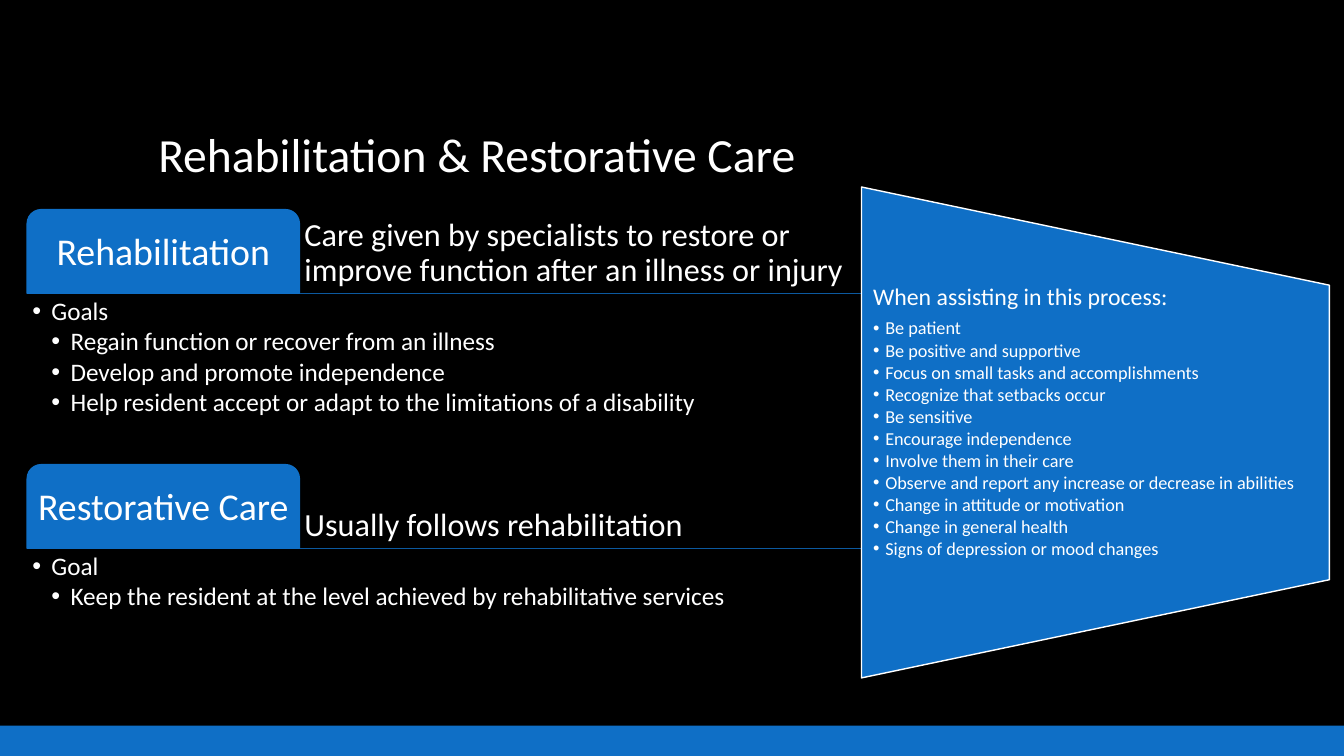
"""Build the rehabilitation and restorative care slide."""
from dataclasses import dataclass

from lxml.etree import SubElement
from pptx import Presentation
from pptx.dml.color import RGBColor
from pptx.enum.shapes import MSO_CONNECTOR, MSO_SHAPE
from pptx.enum.text import MSO_ANCHOR, MSO_AUTO_SIZE, PP_ALIGN
from pptx.oxml.ns import qn
from pptx.util import Inches, Pt

COLORS = {"background": "000000", "accent": "0F6FC6", "rule": "0C599F", "text": "FFFFFF"}
LEFT, LABEL_WIDTH, SECTION_WIDTH = 0.27, 2.7, 10.4
HEADER_HEIGHT, GOALS_HEIGHT = 0.83, 1.66


@dataclass(frozen=True)
class Line:
    """One paragraph with its size, level and bullet indent in inches."""

    text: str
    size: float
    level: int = 0
    margin: float = 0
    hanging: float = 0
    after: float = 0.35


@dataclass(frozen=True)
class Section:
    """A labelled section with a description and a list of goals."""

    top: float
    label: str
    description: str
    heading: str
    goals: tuple[str, ...]
    placeholder: int


SECTIONS = (
    Section(2.08, "Rehabilitation",
            "Care given by specialists to restore or\vimprove function after an illness or injury",
            "Goals",
            ("Regain function or recover from an illness",
             "Develop and promote independence",
             "Help resident accept or adapt to the limitations of a disability"), 2),
    Section(4.61, "Restorative Care", "Usually follows rehabilitation", "Goal",
            ("Keep the resident at the level achieved by rehabilitative services",), 4),
)
PANEL_HEADING = "When assisting in this process:"
PANEL_TIPS = (
    "Be patient",
    "Be positive and supportive",
    "Focus on small tasks and accomplishments",
    "Recognize that setbacks occur",
    "Be sensitive",
    "Encourage independence",
    "Involve them in their care",
    "Observe and report any increase or decrease in abilities",
    "Change in attitude or motivation",
    "Change in general health",
    "Signs of depression or mood changes",
)


def color(name: str) -> RGBColor:
    """Return the named colour."""
    return RGBColor.from_string(COLORS[name])


def place(shape, left: float, top: float, width: float, height: float) -> None:
    """Move and size a shape, bringing it to the front."""
    shape.left, shape.top = Inches(left), Inches(top)
    shape.width, shape.height = Inches(width), Inches(height)
    shape.element.getparent().append(shape.element)


def write(shape, lines: list[Line], anchor=MSO_ANCHOR.TOP, align=PP_ALIGN.LEFT,
          insets: tuple[float, float] = (0.05, 0.05)) -> None:
    """Fill a shape with formatted lines."""
    frame = shape.text_frame
    frame.word_wrap = True
    frame.auto_size = MSO_AUTO_SIZE.NONE
    frame.vertical_anchor = anchor
    frame.margin_left = frame.margin_right = Inches(insets[0])
    frame.margin_top = frame.margin_bottom = Inches(insets[1])
    for index, line in enumerate(lines):
        paragraph = frame.add_paragraph() if index else frame.paragraphs[0]
        paragraph.text = line.text
        paragraph.level = line.level
        paragraph.alignment = align
        paragraph.line_spacing = 0.9
        paragraph.space_before = Pt(0)
        paragraph.space_after = Pt(round(line.size * line.after, 1))
        properties = paragraph._p.get_or_add_pPr()
        properties.set("marL", str(Inches(line.margin)))
        properties.set("indent", str(Inches(-line.hanging)))
        if line.hanging:
            SubElement(properties, qn("a:buFont"), typeface="Arial")
            SubElement(properties, qn("a:buChar"), char="•")
        else:
            SubElement(properties, qn("a:buNone"))
        for run in paragraph.runs:
            run.font.name = "Calibri"
            run.font.size = Pt(line.size)
            run.font.bold = False
            run.font.color.rgb = color("text")


def add_block(slide, kind, left: float, top: float, width: float, height: float,
              outline: str = "accent"):
    """Add a flat accent-filled shape."""
    shape = slide.shapes.add_shape(kind, Inches(left), Inches(top), Inches(width), Inches(height))
    shape.shadow.inherit = False
    shape.fill.solid()
    shape.fill.fore_color.rgb = color("accent")
    shape.line.color.rgb = color(outline)
    shape.line.width = Pt(1)
    return shape


def add_section(slide, section: Section) -> None:
    """Draw a section's rule, label, description and goals."""
    bottom = section.top + HEADER_HEIGHT
    rule = slide.shapes.add_connector(MSO_CONNECTOR.STRAIGHT, Inches(LEFT), Inches(bottom),
                                      Inches(LEFT + SECTION_WIDTH), Inches(bottom))
    rule.line.color.rgb = color("rule")
    rule.line.width = Pt(1)
    SubElement(rule.element.spPr, qn("a:effectLst"))

    label = add_block(slide, MSO_SHAPE.ROUND_2_SAME_RECTANGLE, LEFT, section.top,
                      LABEL_WIDTH, HEADER_HEIGHT)
    write(label, [Line(section.label, 27)], MSO_ANCHOR.MIDDLE, PP_ALIGN.CENTER, (0.06, 0.06))

    description = slide.shapes.add_textbox(
        Inches(LEFT + LABEL_WIDTH), Inches(section.top),
        Inches(SECTION_WIDTH - LABEL_WIDTH), Inches(HEADER_HEIGHT))
    write(description, [Line(section.description, 23)], MSO_ANCHOR.BOTTOM)

    goals = slide.placeholders[section.placeholder]
    place(goals, LEFT, bottom, SECTION_WIDTH, GOALS_HEIGHT)
    write(goals, [Line(section.heading, 18, 1, 0.19, 0.19, 0.13)]
          + [Line(goal, 18, 2, 0.38, 0.19, 0.13) for goal in section.goals])


def add_panel(slide) -> None:
    """Draw the tapered panel and its list of tips."""
    panel = add_block(slide, MSO_SHAPE.FLOWCHART_MANUAL_OPERATION, 8.43, 1.97, 4.87, 4.64, "text")
    panel.rotation = 270
    tips = slide.placeholders[1]
    place(tips, 8.54, 2.83, 4.64, 2.92)
    write(tips, [Line(PANEL_HEADING, 17)]
          + [Line(tip, 13, 1, 0.12, 0.12, 0.13) for tip in PANEL_TIPS], insets=(0.12, 0))


def main() -> None:
    """Create and save the presentation."""
    presentation = Presentation()
    presentation.slide_width, presentation.slide_height = Inches(13.33), Inches(7.5)
    slide = presentation.slides.add_slide(presentation.slide_layouts.get_by_name("Comparison"))
    slide.background.fill.solid()
    slide.background.fill.fore_color.rgb = color("background")

    unused = slide.placeholders[3].element
    unused.getparent().remove(unused)

    footer = add_block(slide, MSO_SHAPE.RECTANGLE, 0, 7.2, 13.33, 0.3)
    footer.line.fill.background()
    place(slide.shapes.title, 1.47, 0.51, 10.4, 1.35)
    write(slide.shapes.title, [Line(SLIDE_TITLE, 34, after=0)], MSO_ANCHOR.BOTTOM,
          insets=(0.1, 0.05))
    for section in SECTIONS:
        add_section(slide, section)
    add_panel(slide)
    presentation.save("out.pptx")


SLIDE_TITLE = "Rehabilitation & Restorative Care"

if __name__ == "__main__":
    main()
